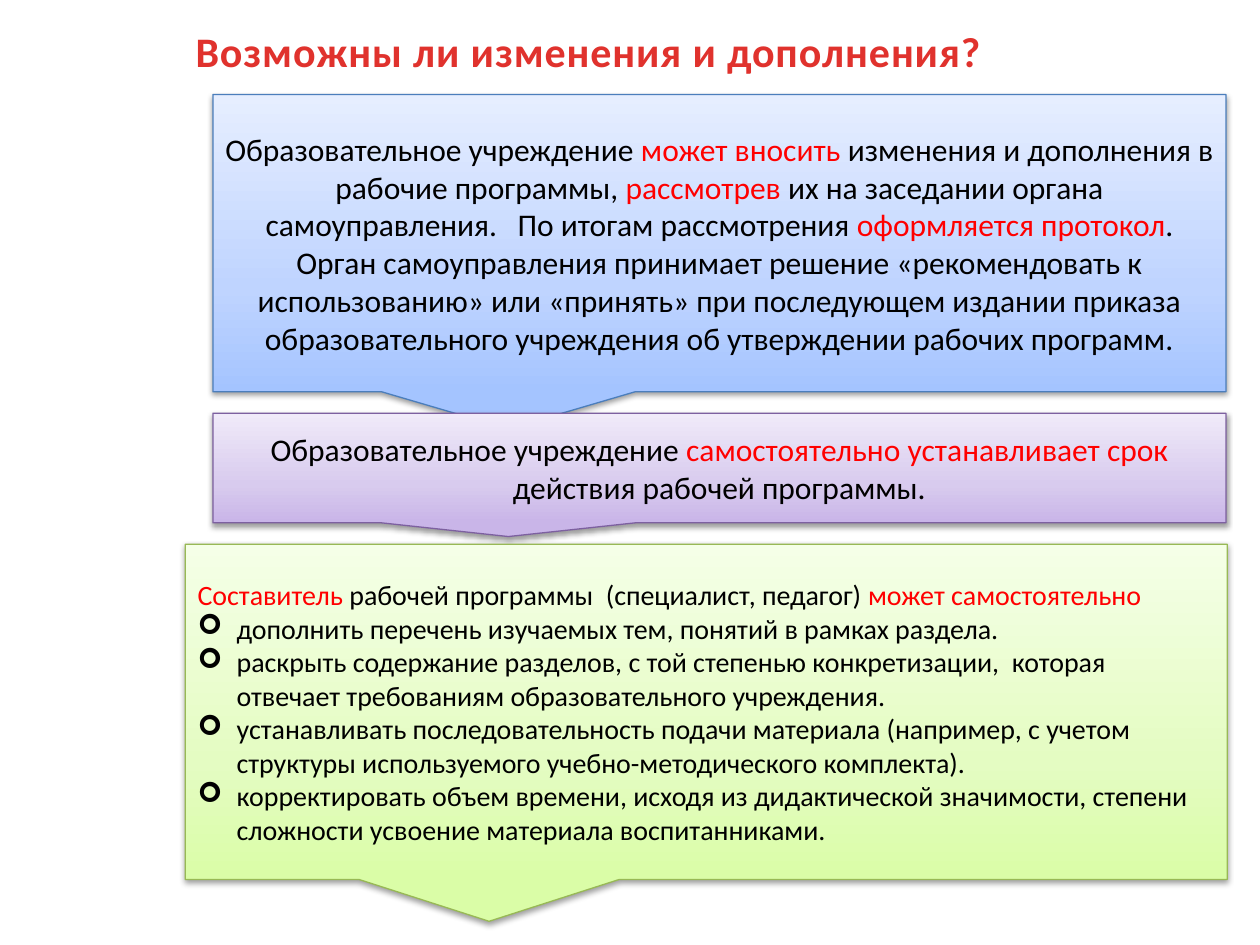
from copy import deepcopy
from typing import NamedTuple

from lxml import etree
from pptx import Presentation
from pptx.dml.color import RGBColor
from pptx.enum.shapes import MSO_SHAPE
from pptx.enum.text import MSO_ANCHOR, PP_ALIGN
from pptx.oxml.ns import qn
from pptx.util import Inches, Pt

CALLOUT = MSO_SHAPE.RECTANGULAR_CALLOUT
MIDDLE = MSO_ANCHOR.MIDDLE
CENTER, LEFT = PP_ALIGN.CENTER, PP_ALIGN.LEFT

FONT = "Calibri"
BLACK = RGBColor(0x00, 0x00, 0x00)
RED = RGBColor(0xFF, 0x00, 0x00)
BRICK = RGBColor(0xE0, 0x32, 0x2D)
BLUES = (RGBColor(0xA4, 0xC4, 0xFF), RGBColor(0xBF, 0xD4, 0xFF), RGBColor(0xE6, 0xEE, 0xFF))
LILACS = (RGBColor(0xC9, 0xB5, 0xE8), RGBColor(0xD8, 0xCB, 0xEE), RGBColor(0xF0, 0xEA, 0xF9))
GREENS = (RGBColor(0xDA, 0xFD, 0xA7), RGBColor(0xE4, 0xFC, 0xC2), RGBColor(0xF5, 0xFF, 0xE7))
BLUE_EDGE = RGBColor(0x4B, 0x7E, 0xBC)
LILAC_EDGE = RGBColor(0x7D, 0x60, 0xA0)
GREEN_EDGE = RGBColor(0x98, 0xB9, 0x55)
STOPS = (0, 0.35, 1)
INDENT = Inches(0.31)


class Span(NamedTuple):
    text: str
    color: RGBColor = BLACK


class Para(NamedTuple):
    spans: tuple[Span, ...]
    bullet: bool = False


class Panel(NamedTuple):
    left: float
    top: float
    width: float
    height: float
    fades: tuple[RGBColor, ...]
    edge: RGBColor
    size: int
    align: PP_ALIGN
    paras: tuple[Para, ...]


TITLE = "Возможны ли изменения и дополнения?"

CHANGES = Para((
    Span("Образовательное учреждение "),
    Span("может вносить ", RED),
    Span("изменения и дополнения в рабочие программы, "),
    Span("рассмотрев", RED),
    Span(" их на заседании органа самоуправления.\tПо итогам рассмотрения "),
    Span("оформляется протокол", RED),
    Span(". Орган самоуправления принимает решение «рекомендовать к использованию» "
         "или «принять» при последующем издании приказа образовательного учреждения "
         "об утверждении рабочих программ."),
))

TERM = Para((
    Span("Образовательное учреждение "),
    Span("самостоятельно устанавливает срок ", RED),
    Span("действия рабочей программы."),
))

AUTHOR = Para((
    Span("Составитель", RED),
    Span(" рабочей программы  (специалист, педагог) "),
    Span("может самостоятельно", RED),
))

RIGHTS = tuple(Para((Span(text),), bullet=True) for text in (
    "дополнить перечень изучаемых тем, понятий в рамках раздела.",
    "раскрыть содержание разделов, с той степенью конкретизации,  которая отвечает "
    "требованиям образовательного учреждения.",
    "устанавливать последовательность подачи материала (например, с учетом структуры "
    "используемого учебно-методического комплекта).",
    "корректировать объем времени, исходя из дидактической значимости, степени "
    "сложности усвоение материала воспитанниками.",
))

PANELS = (
    Panel(1.69, 0.75, 8.04, 2.36, BLUES, BLUE_EDGE, 18, CENTER, (CHANGES,)),
    Panel(1.69, 3.28, 8.04, 0.87, LILACS, LILAC_EDGE, 18, CENTER, (TERM,)),
    Panel(1.47, 4.32, 8.27, 2.66, GREENS, GREEN_EDGE, 16, LEFT, (AUTHOR, *RIGHTS)),
)


def add_run(para, span: Span, size: int):
    run = para.add_run()
    run.text = span.text
    run.font.name = FONT
    run.font.size = Pt(size)
    run.font.color.rgb = span.color
    return run


def add_bullet(para) -> None:
    props = para._p.get_or_add_pPr()
    props.set("marL", str(INDENT))
    props.set("indent", str(-INDENT))
    etree.SubElement(props, qn("a:buFont"), typeface="Wingdings")
    etree.SubElement(props, qn("a:buChar"), char="➢")


def fade(shape, colors: tuple[RGBColor, ...]) -> None:
    """Fill the shape with a gradient that rises from bottom to top."""
    fill = shape.fill
    fill.gradient()
    fill.gradient_angle = 90
    stops = shape._element.spPr.find(".//" + qn("a:gsLst"))
    stops.append(deepcopy(stops[0]))
    for stop, place, color in zip(fill.gradient_stops, STOPS, colors):
        stop.position = place
        stop.color.rgb = color


def add_shadow(shape) -> None:
    shape.shadow.inherit = False
    effects = shape._element.spPr.find(qn("a:effectLst"))
    outer = etree.SubElement(
        effects, qn("a:outerShdw"), blurRad=str(Pt(3.1)), dist=str(Pt(1.6)),
        dir="5400000", rotWithShape="0")
    color = etree.SubElement(outer, qn("a:srgbClr"), val=str(BLACK))
    etree.SubElement(color, qn("a:alpha"), val="38000")


def add_panel(slide, panel: Panel) -> None:
    shape = slide.shapes.add_shape(
        CALLOUT, Inches(panel.left), Inches(panel.top),
        Inches(panel.width), Inches(panel.height))
    fade(shape, panel.fades)
    shape.line.color.rgb = panel.edge
    shape.line.width = Pt(0.75)
    add_shadow(shape)
    frame = shape.text_frame
    frame.word_wrap = True
    frame.vertical_anchor = MIDDLE
    for i, item in enumerate(panel.paras):
        para = frame.add_paragraph() if i else frame.paragraphs[0]
        para.alignment = panel.align
        if item.bullet:
            add_bullet(para)
        for span in item.spans:
            add_run(para, span, panel.size)


def set_title(slide) -> None:
    title = slide.shapes.title
    title.left, title.top = Inches(1.03), Inches(0.06)
    title.width, title.height = Inches(7.28), Inches(0.69)
    title.text_frame.vertical_anchor = MIDDLE
    para = title.text_frame.paragraphs[0]
    para.alignment = CENTER
    run = add_run(para, Span(TITLE, BRICK), 24)
    run.font.bold = True
    run.font._element.set("spc", "50")


def main() -> None:
    deck = Presentation()
    deck.slide_width, deck.slide_height = Inches(10), Inches(7.5)
    slide = deck.slides.add_slide(deck.slide_layouts[5])
    set_title(slide)
    for panel in PANELS:
        add_panel(slide, panel)
    deck.save("out.pptx")


if __name__ == "__main__":
    main()
